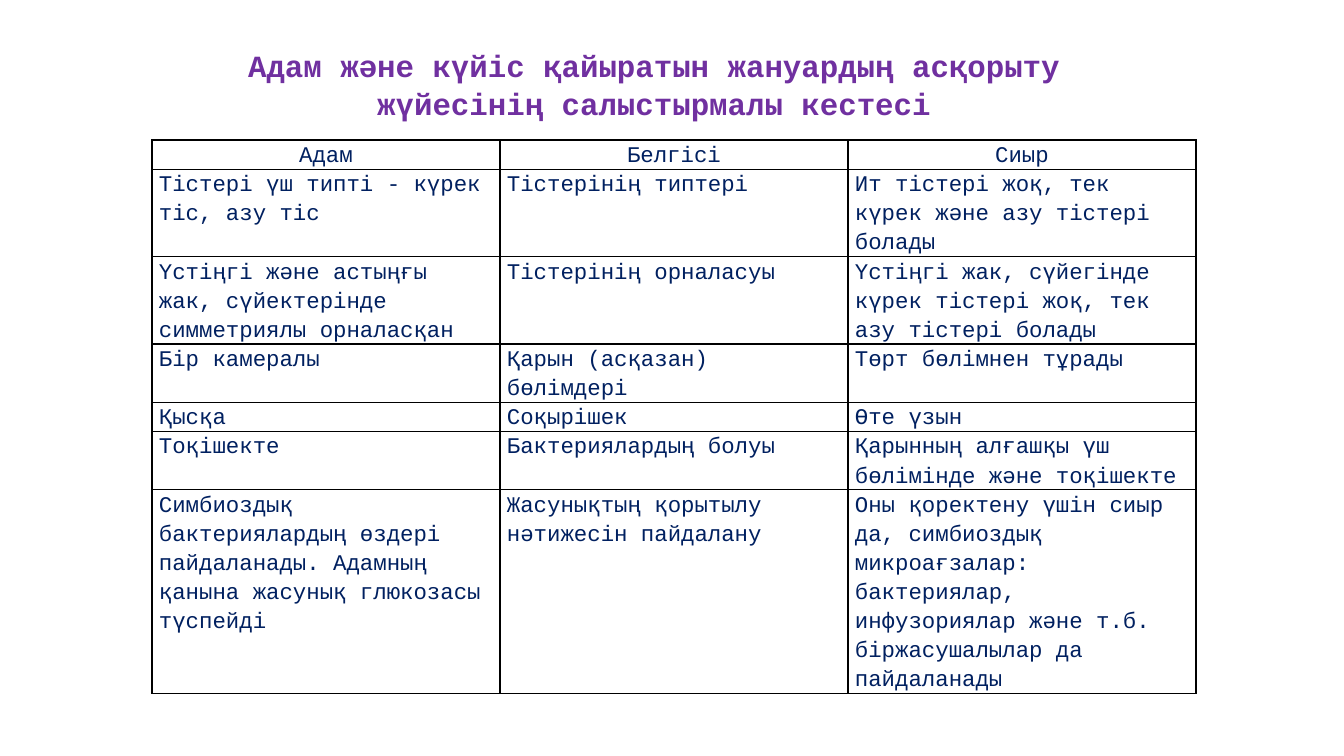
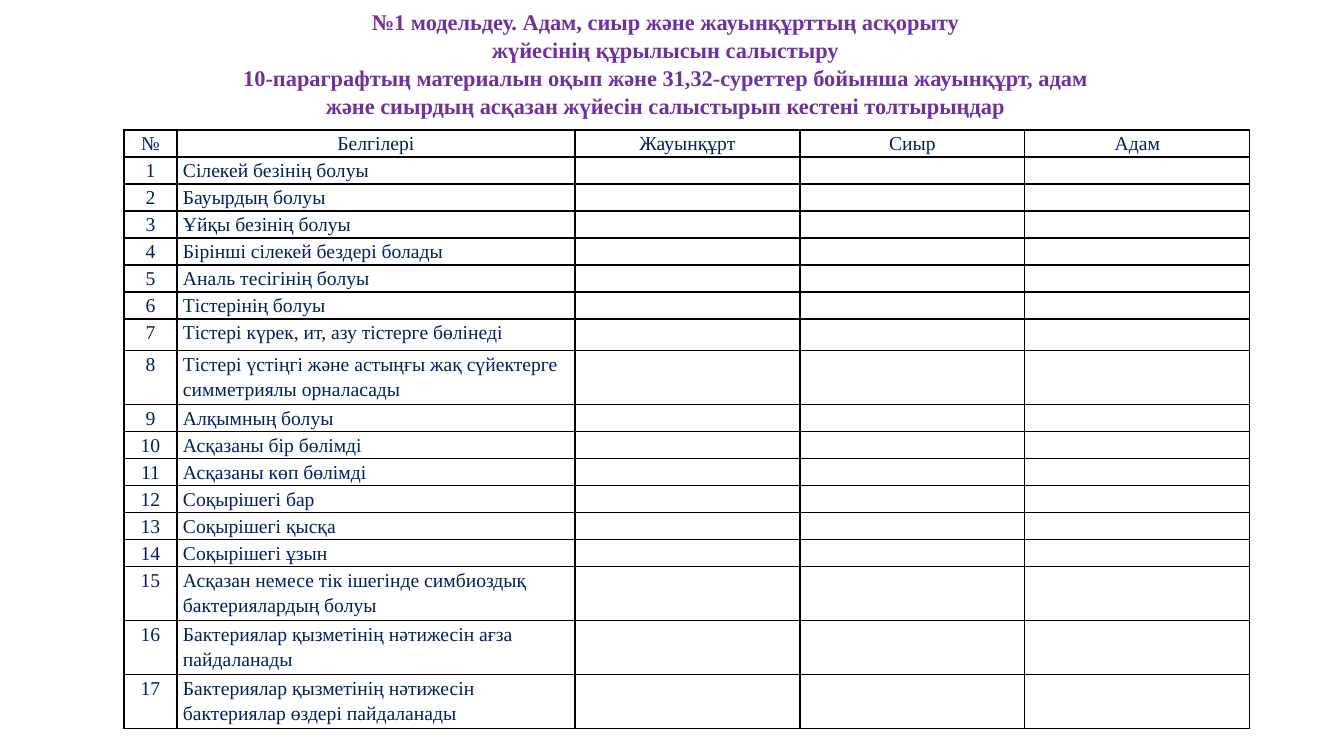
from dataclasses import dataclass

from lxml.etree import SubElement
from pptx import Presentation
from pptx.dml.color import RGBColor
from pptx.enum.text import MSO_ANCHOR, MSO_AUTO_SIZE, PP_ALIGN
from pptx.oxml import parse_xml
from pptx.oxml.ns import nsdecls, qn
from pptx.util import Emu, Pt

PAGE_WIDTH, PAGE_HEIGHT = 1344, 756
EMU_PER_PX = 12192000 / PAGE_WIDTH


def px(length):
    return Emu(round(length * EMU_PER_PX))


@dataclass(frozen=True)
class Theme:
    title_color: str = "7030A0"
    text_color: str = "002060"
    border_color: str = "000000"
    border_width: int = 1
    mono: str = "Courier New"
    serif: str = "Times New Roman"
    mono_title: int = 22
    mono_text: int = 16
    serif_title: int = 16
    serif_text: int = 14
    title_spacing: float = 1.04
    cell_spacing: float = 1.15


class Deck:
    def __init__(self, theme):
        self.theme = theme
        self.presentation = Presentation()
        self.presentation.slide_width = px(PAGE_WIDTH)
        self.presentation.slide_height = px(PAGE_HEIGHT)
        self.page = None

    def add_page(self):
        layout = self.presentation.slide_layouts[5]
        self.page = self.presentation.slides.add_slide(layout)

    def style(self, paragraph, font_name, size, color, bold=False):
        font = paragraph.font
        font.name = font_name
        font.size = Pt(size)
        font.bold = bold
        font.color.rgb = RGBColor.from_string(color)

    def title(self, text, bounds, top_margin, font_name, size):
        box = self.page.shapes.title
        box.left, box.top, box.width, box.height = map(px, bounds)
        frame = box.text_frame
        frame.text = text
        frame.word_wrap = True
        frame.auto_size = MSO_AUTO_SIZE.NONE
        frame.vertical_anchor = MSO_ANCHOR.TOP
        frame.margin_left = frame.margin_right = px(10)
        frame.margin_top, frame.margin_bottom = px(top_margin), 0
        for paragraph in frame.paragraphs:
            paragraph.alignment = PP_ALIGN.CENTER
            paragraph.line_spacing = self.theme.title_spacing
            self.style(paragraph, font_name, size, self.theme.title_color, bold=True)

    def table(self, left, top, widths, heights, rows, inset, font_name, size,
              centred_columns=()):
        grid = self.page.shapes.add_table(
            len(rows), len(widths), px(left), px(top),
            px(sum(widths)), px(sum(heights))).table
        grid.first_row = grid.horz_banding = False
        for column, width in zip(grid.columns, widths):
            column.width = px(width)
        for row, height in zip(grid.rows, heights):
            row.height = px(height)
        for row_index, texts in enumerate(rows):
            for column_index, text in enumerate(texts):
                centred = row_index == 0 or column_index in centred_columns
                self.cell(grid.cell(row_index, column_index), text, centred,
                          inset, font_name, size)

    def cell(self, cell, text, centred, inset, font_name, size):
        cell.margin_left = cell.margin_right = px(inset)
        cell.margin_top = cell.margin_bottom = 0
        cell.fill.background()
        self.borders(cell)
        cell.text = text
        paragraph = cell.text_frame.paragraphs[0]
        paragraph.alignment = PP_ALIGN.CENTER if centred else PP_ALIGN.LEFT
        paragraph.line_spacing = self.theme.cell_spacing
        self.style(paragraph, font_name, size, self.theme.text_color)
        if not text:
            ending = SubElement(paragraph._p, qn("a:endParaRPr"), sz=str(size * 100))
            SubElement(ending, qn("a:latin"), typeface=font_name)

    def borders(self, cell):
        properties = cell._tc.get_or_add_tcPr()
        for index, side in enumerate("LRTB"):
            properties.insert(index, parse_xml(
                f'<a:ln{side} {nsdecls("a")} w="{Pt(self.theme.border_width)}">'
                f'<a:solidFill><a:srgbClr val="{self.theme.border_color}"/></a:solidFill>'
                f'</a:ln{side}>'))


COMPARISON_ROWS = [
    ("Адам", "Белгісі", "Сиыр"),
    ("Тістері үш типті - күрек тіс, азу тіс", "Тістерінің типтері",
     "Ит тістері жоқ, тек күрек және азу тістері болады"),
    ("Үстіңгі және астыңғы жак, сүйектерінде симметриялы орналасқан",
     "Тістерінің орналасуы",
     "Үстіңгі жак, сүйегінде күрек тістері жоқ, тек азу тістері болады"),
    ("Бір камералы", "Қарын (асқазан) бөлімдері", "Төрт бөлімнен тұрады"),
    ("Қысқа", "Соқырішек", "Өте үзын"),
    ("Тоқішекте", "Бактериялардың болуы",
     "Қарынның алғашқы үш бөлімінде және тоқішекте"),
    ("Симбиоздық бактериялардың өздері пайдаланады. "
     "Адамның қанына жасунық глюкозасы түспейді",
     "Жасунықтың қорытылу нәтижесін пайдалану",
     "Оны қоректену үшін сиыр да, симбиоздық микроағзалар: бактериялар, "
     "инфузориялар және т.б. біржасушалылар да пайдаланады"),
]
COMPARISON_LINES = [1, 3, 3, 2, 1, 2, 7]

FEATURES = [
    "Сілекей безінің болуы",
    "Бауырдың болуы",
    "Ұйқы безінің болуы",
    "Бірінші сілекей бездері болады",
    "Аналь тесігінің болуы",
    "Тістерінің болуы",
    "Тістері күрек, ит, азу тістерге бөлінеді",
    "Тістері үстіңгі және астыңғы жақ сүйектерге симметриялы орналасады",
    "Алқымның болуы",
    "Асқазаны бір бөлімді",
    "Асқазаны көп бөлімді",
    "Соқырішегі бар",
    "Соқырішегі қысқа",
    "Соқырішегі ұзын",
    "Асқазан немесе тік ішегінде симбиоздық бактериялардың болуы",
    "Бактериялар қызметінің нәтижесін ағза пайдаланады",
    "Бактериялар қызметінің нәтижесін бактериялар өздері пайдаланады",
]
FEATURE_HEIGHTS = {7: 32, 8: 54, 15: 54, 16: 54, 17: 54}


def comparison_page(deck):
    theme = deck.theme
    deck.add_page()
    deck.title("Адам және күйіс қайыратын жануардың асқорыту "
               "жүйесінің салыстырмалы кестесі",
               (229, 34, 850, 122), 11, theme.mono, theme.mono_title)
    deck.table(152, 140, [348] * 3, [29 * lines for lines in COMPARISON_LINES],
               COMPARISON_ROWS, 7, theme.mono, theme.mono_text)


def worksheet_page(deck):
    theme = deck.theme
    rows = [("№", "Белгілері", "Жауынқұрт", "Сиыр", "Адам")]
    rows += [(str(number), feature, "", "", "")
             for number, feature in enumerate(FEATURES, 1)]
    heights = [FEATURE_HEIGHTS.get(number, 27) for number in range(len(rows))]
    deck.add_page()
    deck.title("№1 модельдеу. Адам, сиыр және жауынқұрттың асқорыту\n"
               "жүйесінің құрылысын салыстыру\n"
               "10-параграфтың материалын оқып және 31,32-суреттер бойынша "
               "жауынқұрт, адам және сиырдың асқазан жүйесін салыстырып "
               "кестені толтырыңдар",
               (229, 0, 873, 149), 7, theme.serif, theme.serif_title)
    deck.table(124, 130, [53, 398] + [225] * 3, heights, rows, 6,
               theme.serif, theme.serif_text, centred_columns=(0,))


def main():
    deck = Deck(Theme())
    comparison_page(deck)
    worksheet_page(deck)
    deck.presentation.save("out.pptx")


if __name__ == "__main__":
    main()
